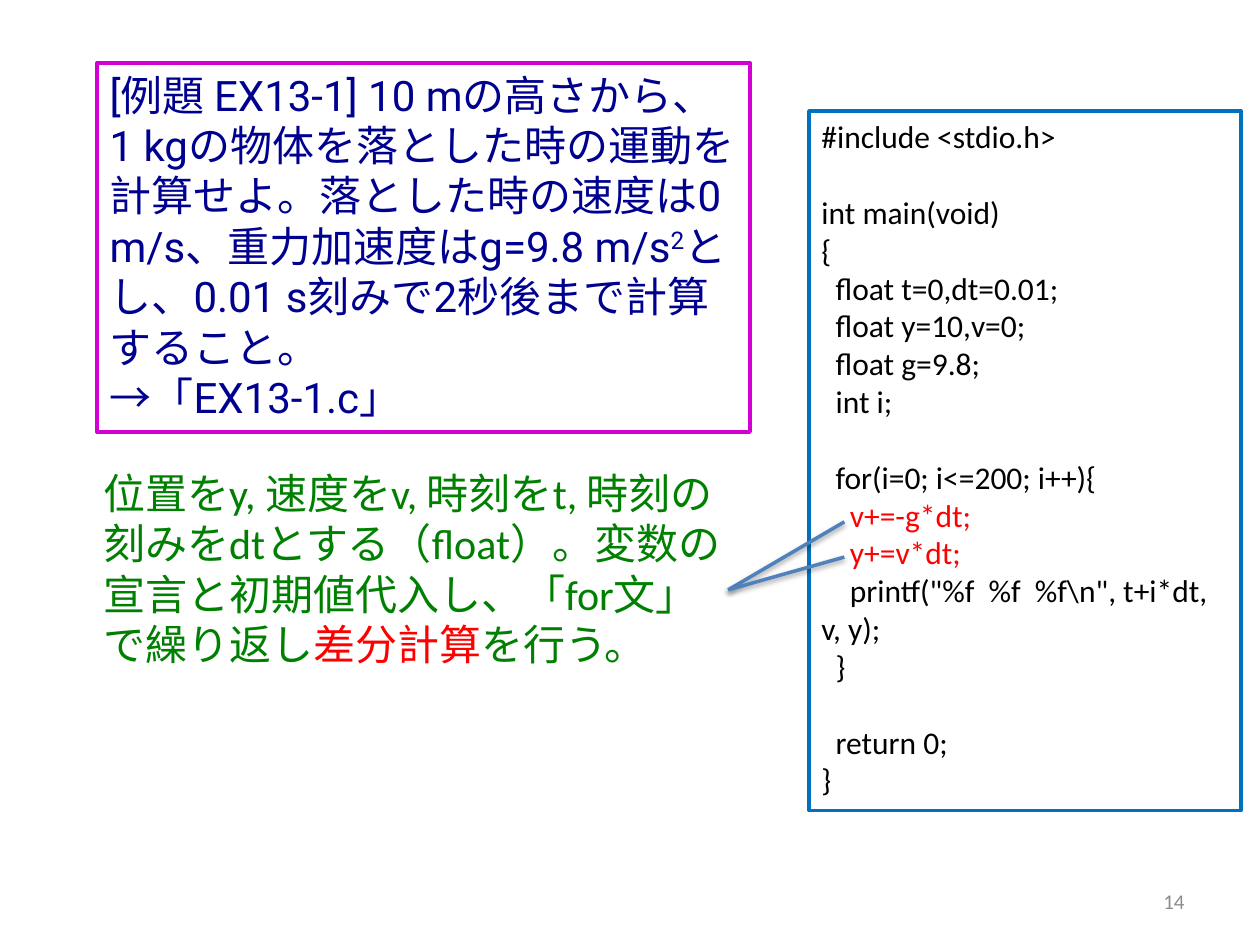
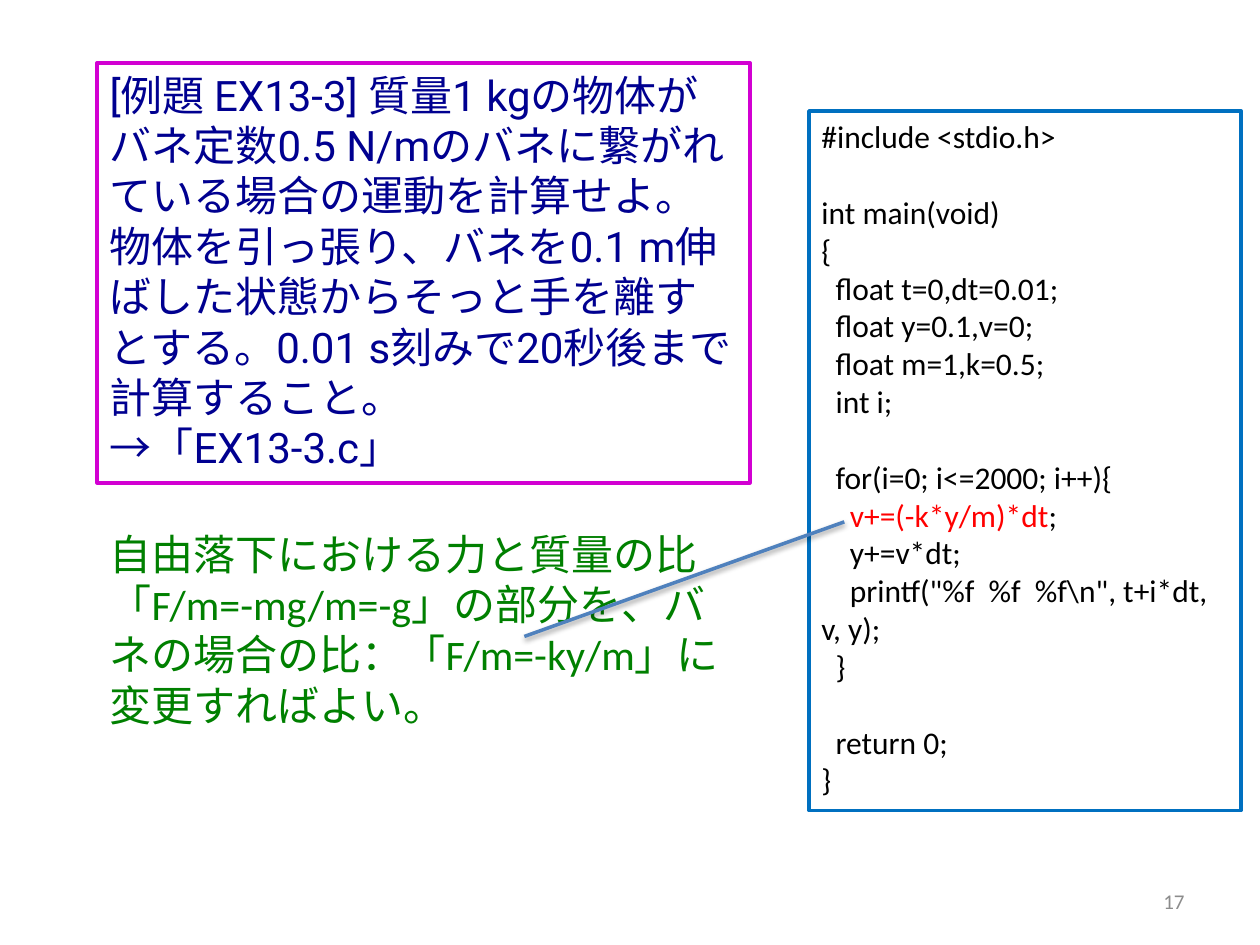
from dataclasses import dataclass
from lxml import etree
from pptx import Presentation
from pptx.dml.color import RGBColor as RGB
from pptx.enum.shapes import MSO_CONNECTOR as Connector
from pptx.enum.text import MSO_ANCHOR as Anchor, MSO_AUTO_SIZE as AutoSize, PP_ALIGN as Align
from pptx.oxml import parse_xml
from pptx.util import Cm, Pt


@dataclass(frozen=True)
class Theme:
    navy = RGB(0x00, 0x00, 0x90)
    green = RGB(0x00, 0x80, 0x00)
    red = RGB(0xFF, 0x00, 0x00)
    black = RGB(0x00, 0x00, 0x00)
    grey = RGB(0x8C, 0x8C, 0x8C)
    magenta = RGB(0xD2, 0x00, 0xD2)
    blue = RGB(0x00, 0x70, 0xC0)
    pointer = RGB(0x4F, 0x81, 0xBD)
    body_font = "Calibri"
    exercise_font = "Roboto"
    body_size = Pt(24)
    code_size = Pt(18)
    number_size = Pt(12)
    code_gap = Pt(21.7)
    code_space = Pt(4.07)
    border = Pt(2.25)
    pointer_width = Pt(2)


theme = Theme()

SHADOW = (
    '<a:effectLst xmlns:a="http://schemas.openxmlformats.org/drawingml/2006/main">'
    '<a:outerShdw blurRad="40000" dist="20000" dir="5400000" rotWithShape="0">'
    '<a:srgbClr val="000000"><a:alpha val="38000"/></a:srgbClr>'
    '</a:outerShdw></a:effectLst>'
)

# Program shared by both exercises; upper-case words are filled in per slide
PROGRAM = r"""#include <stdio.h>

int main(void)
{
  float t=0,dt=0.01;
  float y=HEIGHT,v=0;
  float CONSTANTS;
  int i;

  for(i=0; i<=STEPS; i++){
    VELOCITY
    POSITION
    printf("%f  %f  %f\n", t+i*dt, v, y);
  }

  return 0;
}"""

# In texts, |...| marks red words and |^...| a superscript; boxes are (left, top, width, height)
exercises = [
    {
        "number": "14",
        "exercise_box": (1.96, 1.27, 13.16, 7.44),
        "exercise": "[例題 EX13-1] 10 mの高さから、1 kgの物体を落とした時の運動を計算せよ。"
                    "落とした時の速度は0 m/s、重力加速度はg=9.8 m/s|^2|とし、"
                    "0.01 s刻みで2秒後まで計算すること。\n→「EX13-1.c」",
        "hint_box": (1.83, 9.3, 13.31, 4.37),
        "hint": "位置をy, 速度をv, 時刻をt, 時刻の刻みをdtとする（float）。"
                "変数の宣言と初期値代入し、「for文」で繰り返し|差分計算|を行う。",
        "code": {"HEIGHT": "10", "CONSTANTS": "g=9.8", "STEPS": "200",
                 "VELOCITY": "|v+=-g*dt;|", "POSITION": "|y+=v*dt;|"},
        "pointer_start": (14.68, 11.89),
        "pointer_tops": [10.52, 11.23],
    },
    {
        "number": "17",
        "exercise_box": (1.96, 1.27, 13.16, 8.46),
        "exercise": "[例題 EX13-3] 質量1 kgの物体がバネ定数0.5 N/mのバネに繋がれている場合の"
                    "運動を計算せよ。物体を引っ張り、バネを0.1 m伸ばした状態からそっと手を離すとする。"
                    "0.01 s刻みで20秒後まで計算すること。\n→「EX13-3.c」",
        "hint_box": (1.96, 10.52, 13.16, 4.37),
        "hint": "自由落下における力と質量の比「F/m=-mg/m=-g」の部分を、"
                "バネの場合の比：「F/m=-ky/m」に変更すればよい。",
        "code": {"HEIGHT": "0.1", "CONSTANTS": "m=1,k=0.5", "STEPS": "2000",
                 "VELOCITY": "|v+=(-k*y/m)*dt|;", "POSITION": "y+=v*dt;"},
        "pointer_start": (10.57, 12.83),
        "pointer_tops": [10.52],
    },
]
CODE_BOX = (16.31, 2.24, 8.71, 14.1)
NUMBER_BOX = (18.21, 17.65, 5.92, 1.02)
POINTER_END = 17.02


def add_text(slide, box, text, size, color, font=theme.body_font, border=None):
    """Add a text box; blank lines become spacing and leading spaces an indent."""
    shape = slide.shapes.add_textbox(*map(Cm, box))
    if border is not None:
        shape.line.color.rgb = border
        shape.line.width = theme.border
    frame = shape.text_frame
    frame.word_wrap = True
    frame.auto_size = AutoSize.SHAPE_TO_FIT_TEXT
    paragraph, gap = None, False
    for line in text.split("\n"):
        if not line:
            gap = True
            continue
        paragraph = frame.add_paragraph() if paragraph else frame.paragraphs[0]
        paragraph.font.name = font
        paragraph.font.size = size
        paragraph.font.color.rgb = color
        if gap:
            paragraph.space_before = theme.code_gap
            gap = False
        content = line.lstrip()
        if content != line:
            indent = (len(line) - len(content)) * theme.code_space
            paragraph._p.get_or_add_pPr().set("indent", str(indent))
        for index, part in enumerate(content.split("|")):
            if not part:
                continue
            run = paragraph.add_run()
            run.text = part.lstrip("^")
            if part.startswith("^"):
                run.font._element.set("baseline", "30000")
            elif index % 2:
                run.font.color.rgb = theme.red
    return shape


presentation = Presentation()
presentation.slide_width, presentation.slide_height = Cm(25.4), Cm(19.05)

for exercise in exercises:
    slide = presentation.slides.add_slide(presentation.slide_layouts[6])

    # Page number
    number = add_text(slide, NUMBER_BOX, exercise["number"], theme.number_size, theme.grey)
    number.text_frame.auto_size = AutoSize.NONE
    number.text_frame.vertical_anchor = Anchor.MIDDLE
    number.text_frame.paragraphs[0].alignment = Align.RIGHT

    # Exercise and hint
    add_text(slide, exercise["exercise_box"], exercise["exercise"], theme.body_size,
             theme.navy, theme.exercise_font, theme.magenta)
    add_text(slide, exercise["hint_box"], exercise["hint"], theme.body_size, theme.green)

    # Program listing
    program = PROGRAM
    for word, value in exercise["code"].items():
        program = program.replace(word, value)
    add_text(slide, CODE_BOX, program, theme.code_size, theme.black, border=theme.blue)

    # Pointers from the hint to the changed lines
    left, top = exercise["pointer_start"]
    for end_top in exercise["pointer_tops"]:
        pointer = slide.shapes.add_connector(
            Connector.STRAIGHT, Cm(left), Cm(top), Cm(POINTER_END), Cm(end_top))
        pointer.line.color.rgb = theme.pointer
        pointer.line.width = theme.pointer_width
        pointer._element.spPr.append(parse_xml(SHADOW))

presentation.save("out.pptx")
